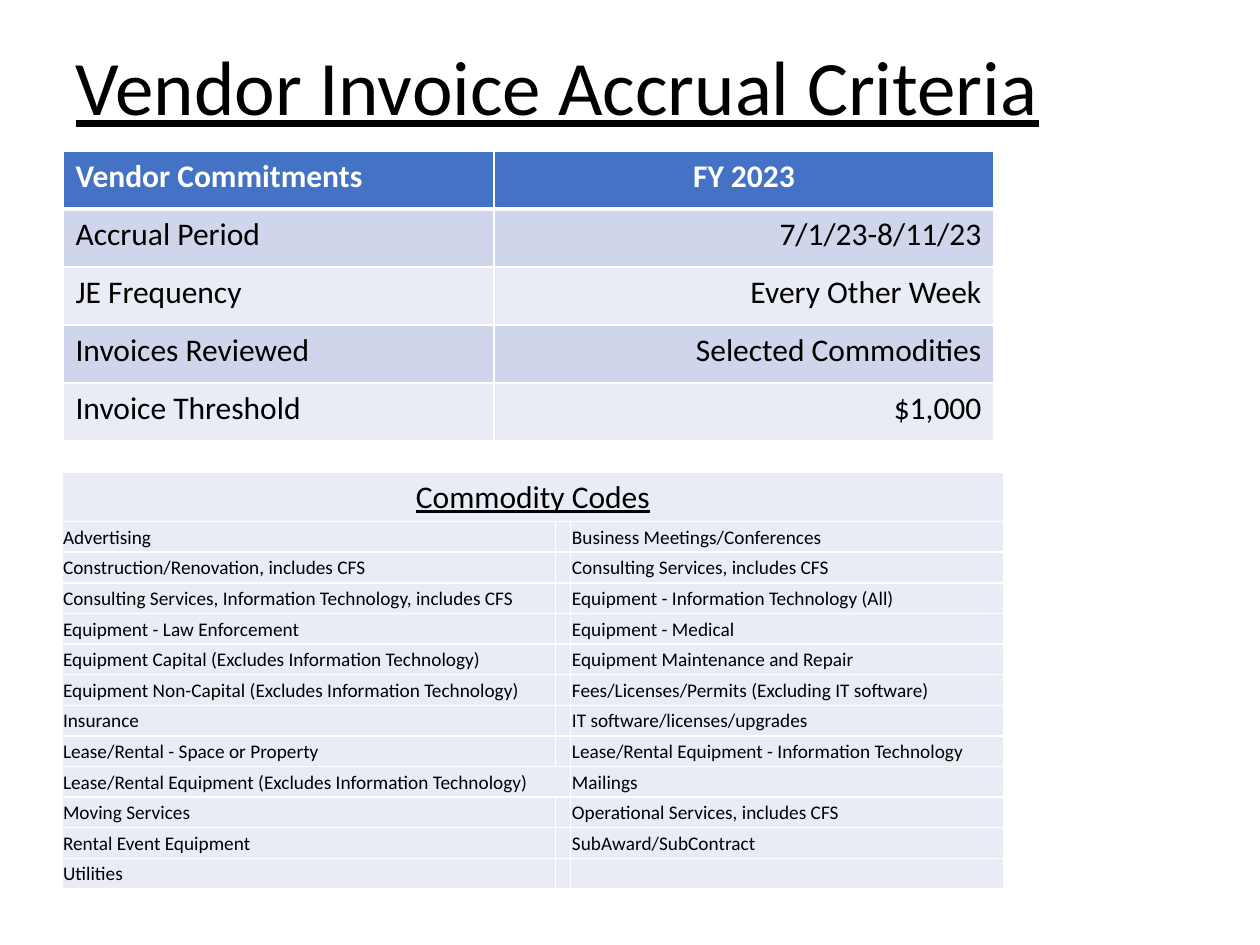
from lxml import etree
from pptx import Presentation
from pptx import util as u
from pptx.dml.color import RGBColor
from pptx.enum import text
from pptx.oxml.ns import qn

BLACK, WHITE = "000000", "FFFFFF"
BLUE, BAND, PALE = "4472C4", "CFD5EA", "E9EBF5"
LEFT, CENTER, RIGHT = text.PP_ALIGN.LEFT, text.PP_ALIGN.CENTER, text.PP_ALIGN.RIGHT

CRITERIA = [
    ("Vendor Commitments", "FY 2023"),
    ("Accrual Period", "7/1/23-8/11/23"),
    ("JE Frequency", "Every Other Week"),
    ("Invoices Reviewed", "Selected Commodities"),
    ("Invoice Threshold", "$1,000"),
]
COMMODITIES = [
    ("Advertising", "Business Meetings/Conferences"),
    ("Construction/Renovation, includes CFS", "Consulting Services, includes CFS"),
    ("Consulting Services, Information Technology, includes CFS",
     "Equipment - Information Technology (All)"),
    ("Equipment - Law Enforcement", "Equipment - Medical"),
    ("Equipment Capital (Excludes Information Technology)",
     "Equipment Maintenance and Repair"),
    ("Equipment Non-Capital (Excludes Information Technology)",
     "Fees/Licenses/Permits (Excluding IT software)"),
    ("Insurance", "IT software/licenses/upgrades"),
    ("Lease/Rental - Space or Property",
     "Lease/Rental Equipment - Information Technology"),
    ("Lease/Rental Equipment (Excludes Information Technology)", "Mailings"),
    ("Moving Services", "Operational Services, includes CFS"),
    ("Rental Event Equipment", "SubAward/SubContract"),
    ("Utilities", ""),
]
WIDE_ROW = 9  # its first entry runs across the gap column


def color(value):
    return RGBColor.from_string(value)


def write(frame, words, size=18, ink=BLACK, bold=False, underline=False,
          align=LEFT, spacing=None, font="Calibri"):
    paragraph = frame.paragraphs[0]
    paragraph.alignment = align
    if spacing:
        paragraph.line_spacing = spacing
    if not words:  # keeps an empty cell from growing its row
        etree.SubElement(paragraph._p, qn("a:endParaRPr"), sz=str(size * 100))
        return
    run = paragraph.add_run()
    run.text = words
    run.font.name, run.font.size = font, u.Pt(size)
    run.font.bold, run.font.underline = bold, underline
    run.font.color.rgb = color(ink)


class Deck:
    """Slide on a grid of 100 columns and 75 rows."""

    def __init__(self):
        self.presentation = Presentation()
        self.presentation.slide_width = u.Inches(10)
        self.presentation.slide_height = u.Inches(7.5)
        self.slide = self.presentation.slides.add_slide(
            self.presentation.slide_layouts[5])

    def grid(self, units):
        return round(self.presentation.slide_width * units / 100)

    def title(self, words, left, top, width, height):
        shape = self.slide.shapes.title
        shape.left, shape.top = self.grid(left), self.grid(top)
        shape.width, shape.height = self.grid(width), self.grid(height)
        frame = shape.text_frame
        frame.word_wrap = True
        frame.vertical_anchor = text.MSO_ANCHOR.MIDDLE
        write(frame, words, size=44, underline=True, spacing=0.9)

    def table(self, left, top, widths, heights):
        table = self.slide.shapes.add_table(
            len(heights), len(widths), self.grid(left), self.grid(top),
            self.grid(sum(widths)), self.grid(sum(heights))).table
        table.first_row = table.horz_banding = False
        for column, width in zip(table.columns, widths):
            column.width = self.grid(width)
        for row, height in zip(table.rows, heights):
            row.height = self.grid(height)
        return table

    def cell(self, cell, words, fill, tight=False, top=1, bottom=1, **style):
        if tight:
            cell.margin_left = cell.margin_right = cell.margin_top = u.Inches(0.01)
            cell.margin_bottom = 0
            cell.vertical_anchor = text.MSO_ANCHOR.MIDDLE
        write(cell.text_frame, words, **style)
        cell.fill.solid()
        cell.fill.fore_color.rgb = color(fill)
        # Borders come before the fill in the cell properties
        properties = cell._tc.get_or_add_tcPr()
        sides = (("L", 1), ("R", 1), ("T", top), ("B", bottom))
        for index, (side, points) in enumerate(sides):
            line = etree.Element(qn(f"a:ln{side}"), w=str(int(u.Pt(points))))
            solid = etree.SubElement(line, qn("a:solidFill"))
            etree.SubElement(solid, qn("a:srgbClr"), val=WHITE)
            properties.insert(index, line)


def main():
    deck = Deck()
    deck.title("Vendor Invoice Accrual Criteria", 5, 2.4, 80.1, 9.6)

    # Accrual criteria
    table = deck.table(5, 12, [34.2, 39.7], [4.6] * len(CRITERIA))
    for r, entries in enumerate(CRITERIA):
        header = r == 0
        fill = BLUE if header else BAND if r % 2 else PALE
        for c, words in enumerate(entries):
            deck.cell(table.cell(r, c), words, fill, bold=header,
                      ink=WHITE if header else BLACK,
                      align=LEFT if c == 0 else CENTER if header else RIGHT,
                      top=3 if r == 1 else 1, bottom=3 if header else 1)

    # Commodity codes, in two columns with a narrow gap between
    table = deck.table(4.9, 37.5, [39.2, 1.2, 34.4],
                       [3.9] + [2.43] * len(COMMODITIES))
    table.cell(0, 0).merge(table.cell(0, 2))
    table.cell(WIDE_ROW, 0).merge(table.cell(WIDE_ROW, 1))
    deck.cell(table.cell(0, 0), "Commodity Codes", PALE, tight=True,
              underline=True, align=CENTER)
    for r, (first, second) in enumerate(COMMODITIES, start=1):
        for c, words in enumerate((first, "", second)):
            deck.cell(table.cell(r, c), words, PALE, tight=True, size=11)

    deck.presentation.save("out.pptx")


if __name__ == "__main__":
    main()
